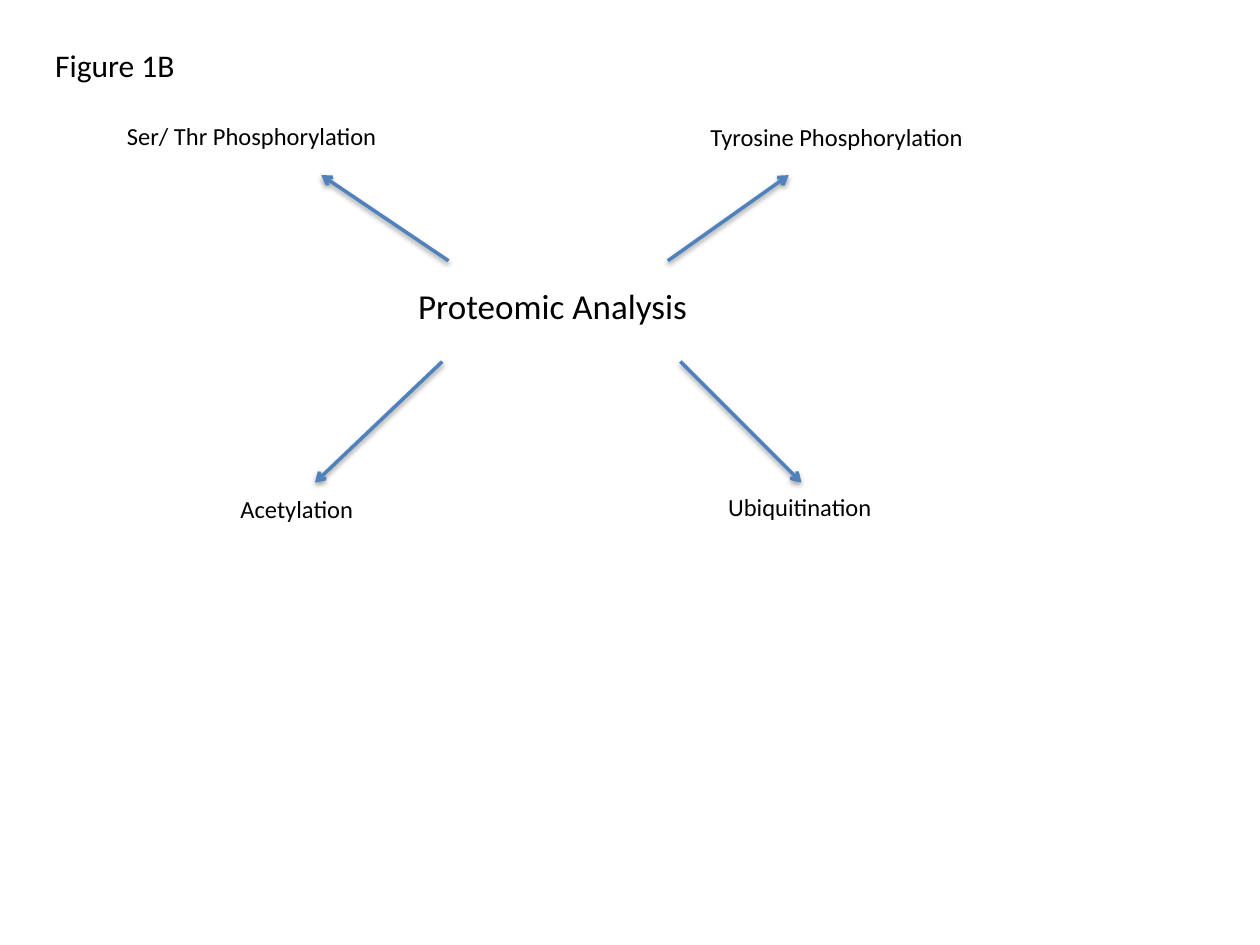
from lxml.etree import SubElement
from pptx import Presentation
from pptx.dml.color import RGBColor
from pptx.enum.shapes import MSO_CONNECTOR
from pptx.enum.text import MSO_AUTO_SIZE
from pptx.oxml.ns import qn
from pptx.util import Inches, Pt

COLORS = {"text": "000000", "arrow": "4F81BD", "shadow": "000000"}

prs = Presentation()
prs.slide_width, prs.slide_height = Inches(10), Inches(7.5)
s = prs.slides.add_slide(prs.slide_layouts[6])

# Grid of 100 columns by 75 rows
COL, ROW = prs.slide_width / 100, prs.slide_height / 75


def grid(col, row):
    return round(col * COL), round(row * ROW)


# Labels: text, column, row, width, height, size
labels = [
    ("Proteomic Analysis", 32.2, 22.1, 25.7, 4.4, 20),
    ("Ser/ Thr Phosphorylation", 9.1, 9.1, 23.7, 3.4, 14),
    ("Tyrosine Phosphorylation", 55.4, 9.2, 24.1, 3.4, 14),
    ("Acetylation", 18.1, 38.7, 11.6, 3.4, 14),
    ("Ubiquitination", 56.8, 38.6, 13.9, 3.4, 14),
    ("Figure 1B", 3.4, 3.2, 13, 4, 18),
]
for text, col, row, width, height, size in labels:
    tf = s.shapes.add_textbox(*grid(col, row), *grid(width, height)).text_frame
    tf.word_wrap = False
    tf.auto_size = MSO_AUTO_SIZE.SHAPE_TO_FIT_TEXT
    r = tf.paragraphs[0].add_run()
    r.text = text
    for name, value in {"name": "Calibri", "size": Pt(size)}.items():
        setattr(r.font, name, value)
    r.font.color.rgb = RGBColor.from_string(COLORS["text"])

# Arrows from the centre to each modification
arrows = [
    ((53, 20.7), (62.6, 13.9)),
    ((35.6, 20.7), (25.5, 13.9)),
    ((54, 28.7), (63.6, 38.3)),
    ((35.1, 28.7), (25, 38.3)),
]
for start, end in arrows:
    sp = s.shapes.add_connector(MSO_CONNECTOR.STRAIGHT, *grid(*start), *grid(*end))
    sp.line.width = Pt(2)
    sp.line.color.rgb = RGBColor.from_string(COLORS["arrow"])
    SubElement(sp.line._get_or_add_ln(), qn("a:tailEnd"), type="arrow")

    # Soft shadow straight below the line
    effects = SubElement(sp._element.spPr, qn("a:effectLst"))
    shadow = SubElement(effects, qn("a:outerShdw"), blurRad=str(Pt(3.1)),
                        dist=str(Pt(1.6)), dir=str(90 * 60000), rotWithShape="0")
    color = SubElement(shadow, qn("a:srgbClr"), val=COLORS["shadow"])
    SubElement(color, qn("a:alpha"), val="38000")

prs.save("out.pptx")
